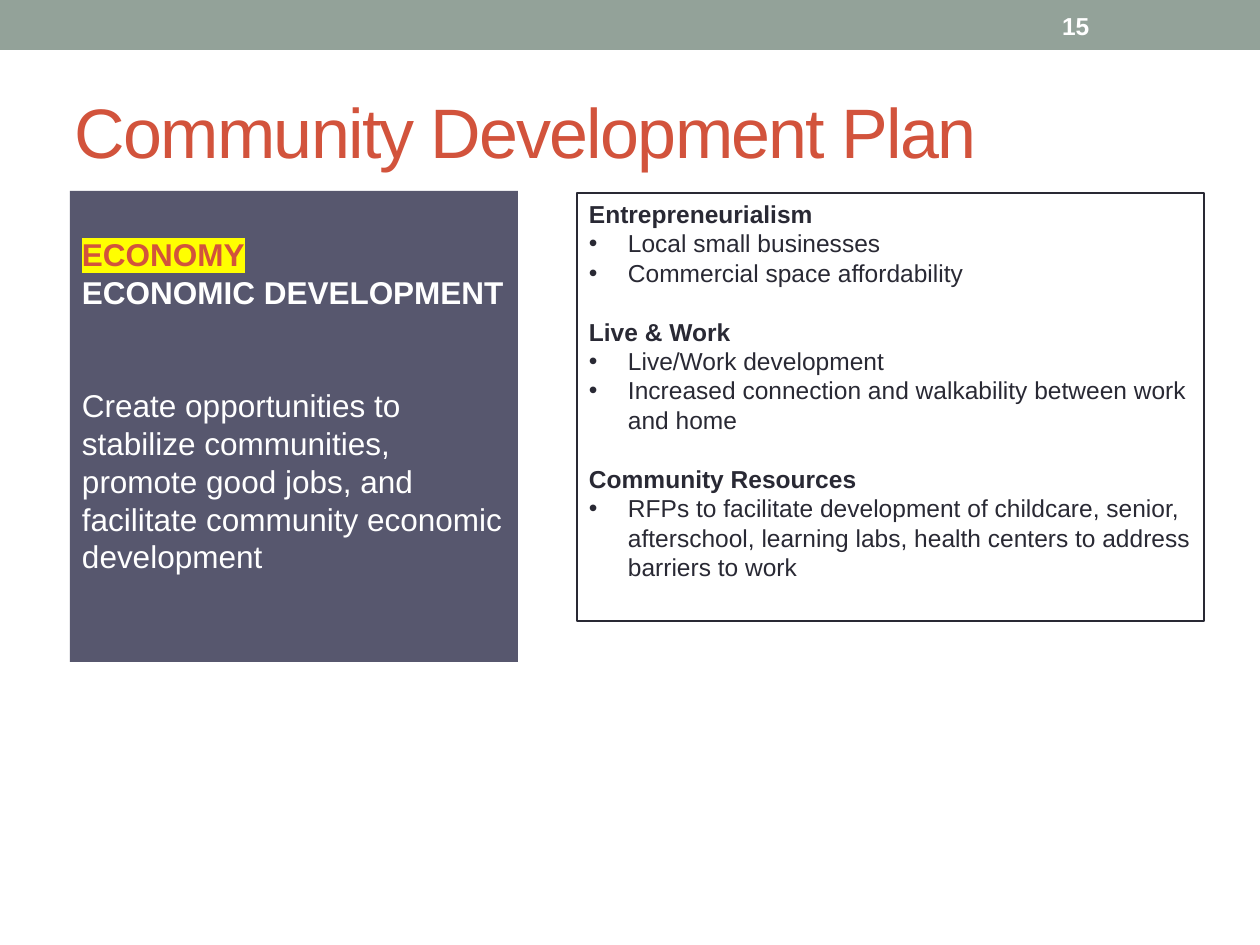
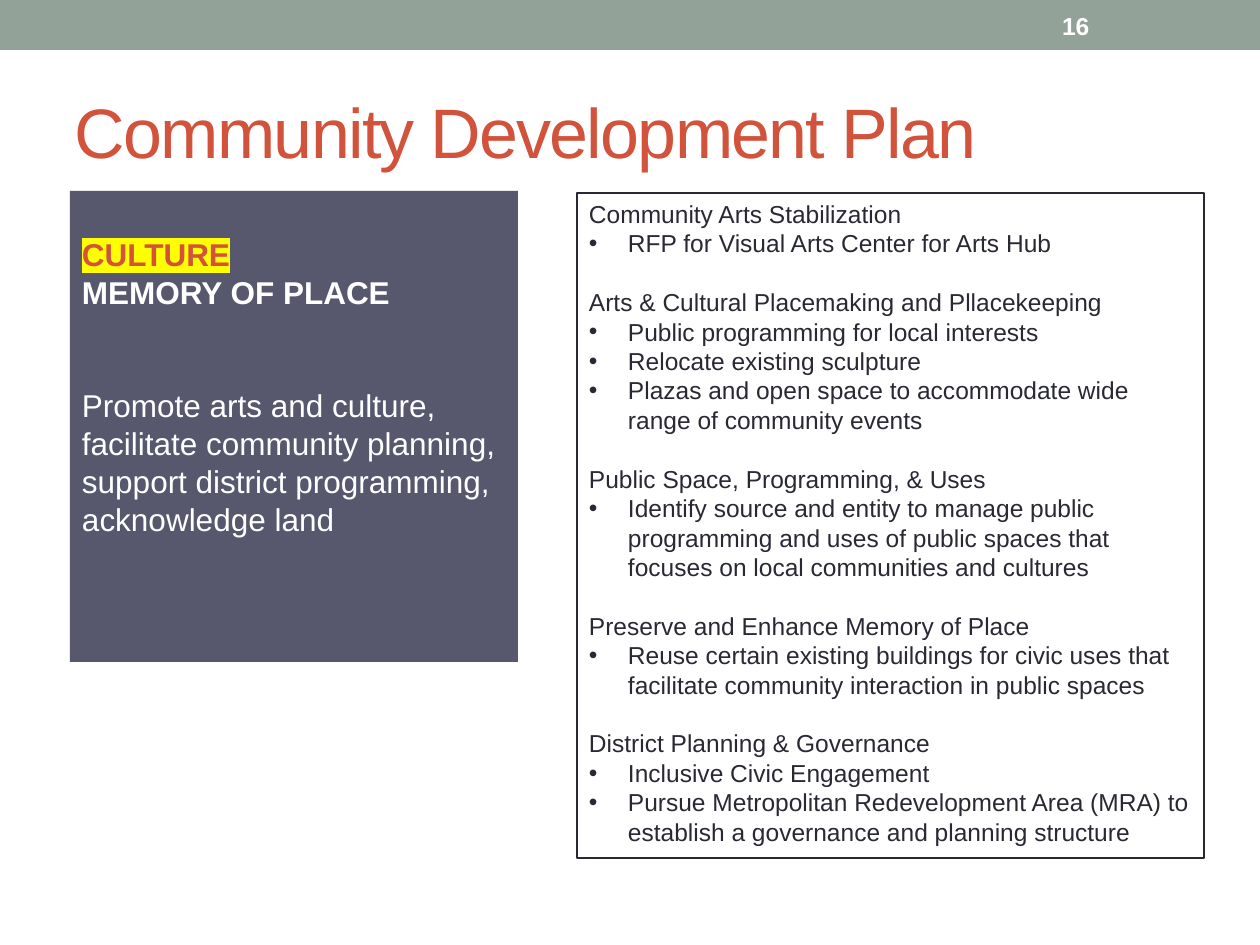
from lxml.etree import SubElement
from pptx import Presentation
from pptx.dml.color import RGBColor
from pptx.enum.shapes import MSO_SHAPE as Shape
from pptx.enum.text import MSO_ANCHOR as Anchor, PP_ALIGN as Align
from pptx.oxml.ns import qn
from pptx.util import Emu, Pt

PX_PER_INCH = 126
FONT = "Arial"
SAGE, RUST, SLATE, INK = "93A299", "D2533C", "57576E", "292934"
WHITE, YELLOW = "FFFFFF", "FFFF00"
TITLE = "Community Development Plan"
LINE_RATIO = 1.2
BULLET_INDENT = 39

PLANS = [
    dict(
        number=15, theme="ECONOMY", subject="ECONOMIC DEVELOPMENT",
        goal="Create opportunities to stabilize communities, promote good jobs, "
             "and facilitate community economic development",
        bold_headings=True, box_height=428,
        topics=[
            ("Entrepreneurialism", [
                "Local small businesses",
                "Commercial space affordability"]),
            ("Live & Work", [
                "Live/Work development",
                "Increased connection and walkability between work and home"]),
            ("Community Resources", [
                "RFPs to facilitate development of childcare, senior, afterschool, "
                "learning labs, health centers to address barriers to work"]),
        ]),
    dict(
        number=16, theme="CULTURE", subject="MEMORY OF PLACE",
        goal="Promote arts and culture, facilitate community planning, "
             "support district programming, acknowledge land",
        bold_headings=False, box_height=665,
        topics=[
            ("Community Arts Stabilization", [
                "RFP for Visual Arts Center for Arts Hub"]),
            ("Arts & Cultural Placemaking and Pllacekeeping", [
                "Public programming for local interests",
                "Relocate existing sculpture",
                "Plazas and open space to accommodate wide range of community events"]),
            ("Public Space, Programming, & Uses", [
                "Identify source and entity to manage public programming and uses of "
                "public spaces that focuses on local communities and cultures"]),
            ("Preserve and Enhance Memory of Place", [
                "Reuse certain existing buildings for civic uses that facilitate "
                "community interaction in public spaces"]),
            ("District Planning & Governance", [
                "Inclusive Civic Engagement",
                "Pursue Metropolitan Redevelopment Area (MRA) to establish a "
                "governance and planning structure"]),
        ]),
]


def px(length):
    return Emu(round(length * 914400 / PX_PER_INCH))


def color(value):
    return RGBColor.from_string(value)


def set_frame(box, anchor, top_inset):
    frame = box.text_frame
    frame.word_wrap = True
    frame.vertical_anchor = anchor
    frame.margin_left = frame.margin_right = px(12)
    frame.margin_top, frame.margin_bottom = px(top_inset), px(6)


def add_rectangle(page, left, top, width, height, fill=None, line=None, top_inset=6):
    box = page.shapes.add_shape(
        Shape.RECTANGLE, px(left), px(top), px(width), px(height))
    box.shadow.inherit = False
    if fill:
        box.fill.solid()
        box.fill.fore_color.rgb = color(fill)
    else:
        box.fill.background()
    if line:
        box.line.color.rgb = color(line)
        box.line.width = Pt(1)
    else:
        box.line.fill.background()
    set_frame(box, Anchor.TOP, top_inset)
    return box


def add_text_box(page, left, top, width, height):
    box = page.shapes.add_textbox(px(left), px(top), px(width), px(height))
    set_frame(box, Anchor.MIDDLE, 6)
    return box


def add_bullet(para):
    properties = para._p.get_or_add_pPr()
    properties.set("marL", str(px(BULLET_INDENT)))
    properties.set("indent", str(-px(BULLET_INDENT)))
    SubElement(properties, qn("a:buFont"), typeface=FONT)
    SubElement(properties, qn("a:buChar"), char="•")


def add_highlight(properties, value):
    highlight = SubElement(properties, qn("a:highlight"))
    SubElement(highlight, qn("a:srgbClr"), val=value)
    properties.find(qn("a:solidFill")).addnext(highlight)


def write(box, text, size, ink, bold=False, bullet=False, highlight=None,
          gap_lines=0, tracking=None):
    frame = box.text_frame
    para = frame.paragraphs[0] if not frame.text else frame.add_paragraph()
    para.alignment = Align.LEFT
    para.line_spacing = Pt(size * LINE_RATIO)
    para.space_before = Pt(size * LINE_RATIO * gap_lines)
    if bullet:
        add_bullet(para)
    span = para.add_run()
    span.text = text
    span.font.name, span.font.size, span.font.bold = FONT, Pt(size), bold
    span.font.color.rgb = color(ink)
    properties = span.font._element
    if highlight:
        add_highlight(properties, highlight)
    if tracking:
        properties.set("spc", str(tracking * 100))


def add_header(page, number):
    add_rectangle(page, 0, 0, 1260, 50, fill=SAGE)
    write(add_text_box(page, 63, 63, 1134, 136), TITLE, 40, RUST, tracking=-1)
    write(add_text_box(page, 1050, 3, 147, 45), str(number), 14, WHITE, bold=True)


def add_topics(page, topics, height, bold_headings):
    box = add_rectangle(page, 577, 193, 627, height, line=INK)
    for index, (heading, actions) in enumerate(topics):
        write(box, heading, 14, INK, bold=bold_headings, gap_lines=min(index, 1))
        for action in actions:
            write(box, action, 14, INK, bullet=True)


def add_goal(page, theme, subject, goal):
    panel = add_rectangle(page, 70, 191, 448, 471, fill=SLATE, top_inset=44)
    write(panel, theme, 18, RUST, bold=True, highlight=YELLOW)
    write(panel, subject, 18, WHITE, bold=True)
    write(panel, goal, 18, WHITE, gap_lines=2)


def main():
    deck = Presentation()
    deck.slide_width, deck.slide_height = px(1260), px(945)
    for plan in PLANS:
        page = deck.slides.add_slide(deck.slide_layouts[6])
        add_header(page, plan["number"])
        add_topics(page, plan["topics"], plan["box_height"], plan["bold_headings"])
        add_goal(page, plan["theme"], plan["subject"], plan["goal"])
    deck.save("out.pptx")


if __name__ == "__main__":
    main()
